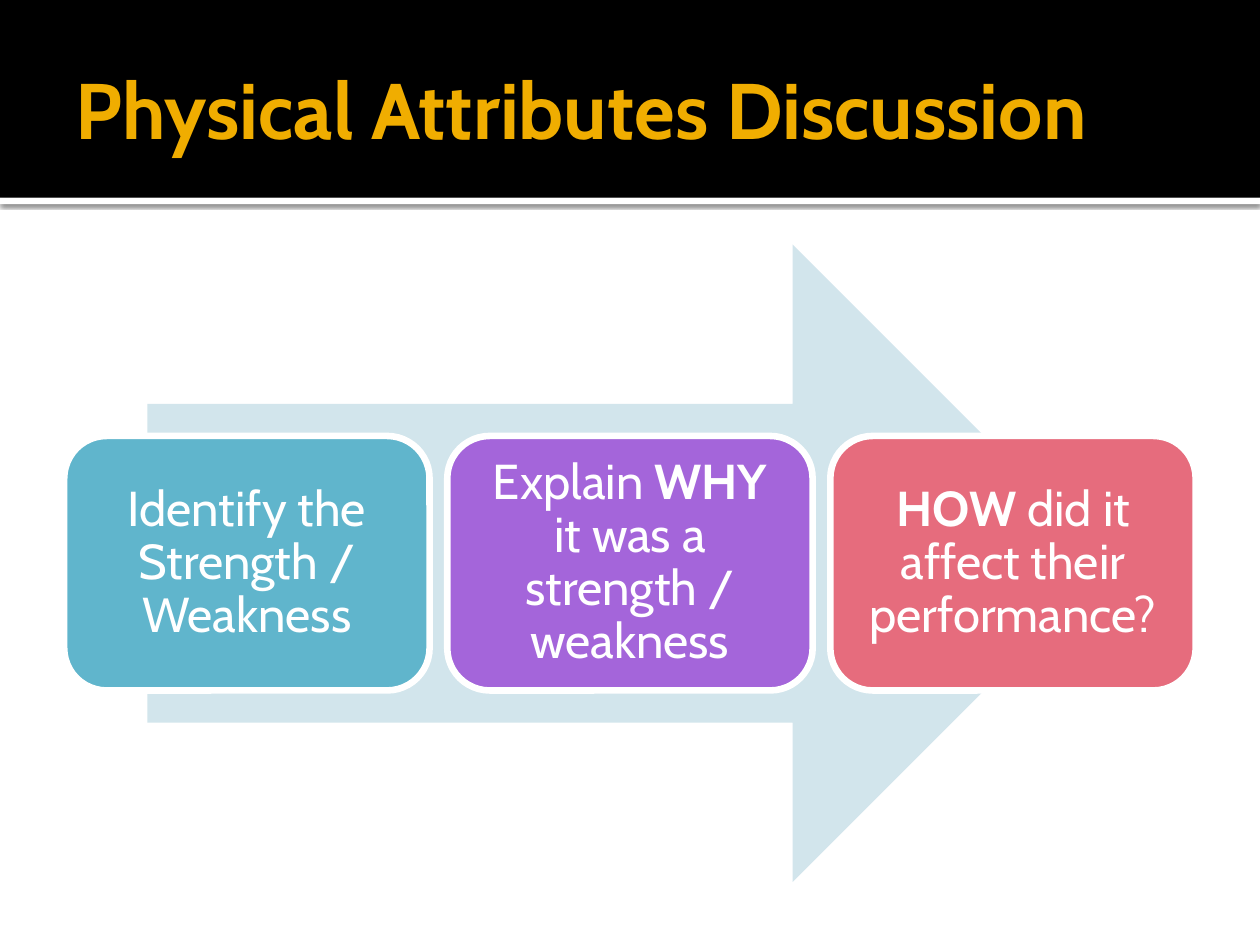
from dataclasses import dataclass

from lxml import etree
from pptx import Presentation
from pptx.dml.color import RGBColor
from pptx.enum import shapes, text
from pptx.oxml import ns
from pptx.util import Inches, Pt

FONT = "Cabin"
COLORS = {
    "white": "FFFFFF",
    "black": "000000",
    "gold": "F0AD00",
    "pale blue": "D2E5EC",
    "teal": "60B5CC",
    "purple": "A465DA",
    "rose": "E66C7D",
}
CARD_LEFT, CARD_TOP, CARD_WIDTH, CARD_HEIGHT = 0.51, 3.46, 2.9, 2.02
CARD_PITCH = 3.04


@dataclass(frozen=True)
class Card:
    color: str
    runs: tuple[tuple[str, bool], ...]  # wording, bold


CARDS = (
    Card("teal", (("Identify the Strength / Weakness", False),)),
    Card("purple", (("Explain ", False), ("WHY", True),
                    (" it was a strength / weakness", False))),
    Card("rose", (("HOW", True), (" did it affect their performance?", False))),
)


def rgb(name: str) -> RGBColor:
    return RGBColor.from_string(COLORS[name])


def add_filled(slide, kind, left: float, top: float, width: float, height: float, color: str):
    """Add a preset shape with a plain fill, no line and no shadow."""
    shape = slide.shapes.add_shape(
        kind, Inches(left), Inches(top), Inches(width), Inches(height))
    shape.shadow.inherit = False
    shape.fill.solid()
    shape.fill.fore_color.rgb = rgb(color)
    shape.line.fill.background()
    return shape


def add_drop_shadow(shape) -> None:
    effects = shape.element.spPr.find(ns.qn("a:effectLst"))
    shadow = etree.SubElement(
        effects, ns.qn("a:outerShdw"), blurRad=str(Pt(2.5)), dist=str(Pt(0.8)),
        dir="5400000", algn="tl", rotWithShape="0")
    color = etree.SubElement(shadow, ns.qn("a:srgbClr"), val=COLORS["black"])
    etree.SubElement(color, ns.qn("a:alpha"), val="60000")


def set_margins(frame, left: float, top: float, right: float, bottom: float) -> None:
    frame.margin_left, frame.margin_top = Inches(left), Inches(top)
    frame.margin_right, frame.margin_bottom = Inches(right), Inches(bottom)


def style_font(paragraph, size: float, color: str) -> None:
    paragraph.font.name = FONT
    paragraph.font.size = Pt(size)
    paragraph.font.color.rgb = rgb(color)


def add_header(slide) -> None:
    rectangle = shapes.MSO_SHAPE.RECTANGLE
    rule = add_filled(slide, rectangle, 0, 1.57, 10, 0.05, "white")
    add_drop_shadow(rule)
    add_filled(slide, rectangle, 0, 0, 10, 1.57, "black")

    title = slide.shapes.title
    title.element.getparent().append(title.element)  # in front of the band
    title.left, title.top = Inches(0.5), Inches(0.17)
    title.width, title.height = Inches(9), Inches(1.37)
    frame = title.text_frame
    frame.text = "Physical Attributes Discussion"
    frame.auto_size = text.MSO_AUTO_SIZE.NONE
    frame.vertical_anchor = text.MSO_ANCHOR.MIDDLE
    set_margins(frame, 0.1, 0.05, 0.05, 0.05)
    paragraph = frame.paragraphs[0]
    paragraph.alignment = text.PP_ALIGN.LEFT
    style_font(paragraph, 45, "gold")
    paragraph.font.bold = True


def add_card(slide, card: Card, left: float) -> None:
    shape = add_filled(slide, shapes.MSO_SHAPE.ROUNDED_RECTANGLE,
                       left, CARD_TOP, CARD_WIDTH, CARD_HEIGHT, card.color)
    shape.line.color.rgb = rgb("white")
    shape.line.width = Pt(3.78)
    frame = shape.text_frame
    frame.word_wrap = True
    frame.vertical_anchor = text.MSO_ANCHOR.MIDDLE
    set_margins(frame, 0.12, 0.12, 0.12, 0.12)
    paragraph = frame.paragraphs[0]
    paragraph.alignment = text.PP_ALIGN.CENTER
    paragraph.line_spacing = 0.9
    style_font(paragraph, 28, "white")
    for wording, bold in card.runs:
        run = paragraph.add_run()
        run.text = wording
        run.font.bold = bold


def main() -> None:
    presentation = Presentation()
    presentation.slide_width, presentation.slide_height = Inches(10), Inches(7.5)
    title_only = presentation.slide_layouts.get_by_name("Title Only")
    slide = presentation.slides.add_slide(title_only)
    add_header(slide)
    add_filled(slide, shapes.MSO_SHAPE.RIGHT_ARROW, 1.17, 1.94, 7.65, 5.06, "pale blue")
    for index, card in enumerate(CARDS):
        add_card(slide, card, CARD_LEFT + index * CARD_PITCH)
    presentation.save("out.pptx")


if __name__ == "__main__":
    main()
